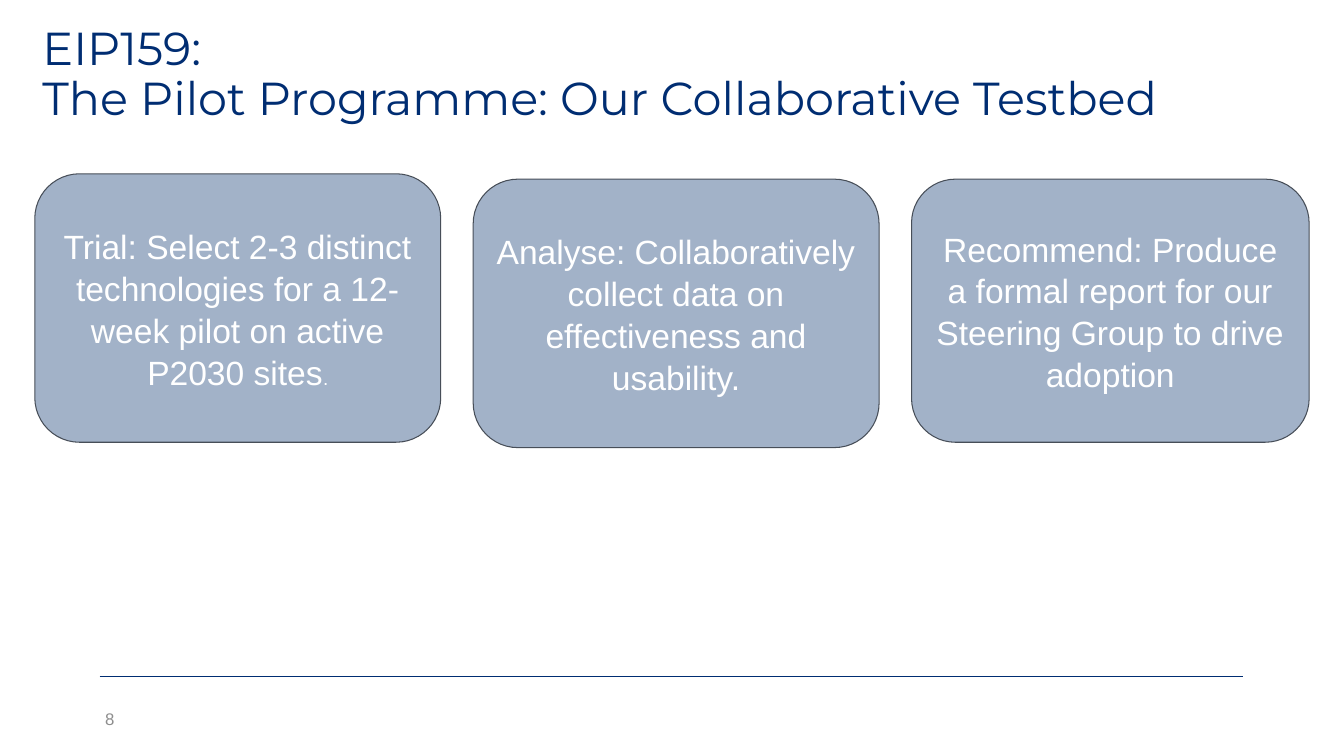
from lxml.etree import SubElement
from pptx import Presentation
from pptx.dml.color import RGBColor
from pptx.enum.shapes import MSO_CONNECTOR, MSO_SHAPE
from pptx.enum.text import MSO_ANCHOR, MSO_AUTO_SIZE, PP_ALIGN
from pptx.oxml.ns import qn
from pptx.util import Cm, Pt

NAVY = RGBColor(0x00, 0x2D, 0x72)
STEEL = RGBColor(0xA2, 0xB2, 0xC8)
SLATE = RGBColor(0x47, 0x4E, 0x58)
GREY = RGBColor(0x8E, 0x8E, 0x8E)
WHITE = RGBColor(0xFF, 0xFF, 0xFF)

TITLE = ["EIP159:", "The Pilot Programme: Our Collaborative Testbed"]
CARDS = [
    (5.84, 13.64, 9.02, [
        ("Trial: Select 2-3 distinct technologies for a 12-week pilot on active P2030 sites", 32),
        (".", 18)]),
    (6.02, 13.64, 9.02, [
        ("Analyse: Collaboratively collect data on effectiveness and usability.", 32)]),
    (6.02, 13.36, 8.84, [
        ("Recommend: Produce a formal report for our Steering Group to drive adoption", 32)]),
]
LEFT, PITCH = 1.17, 14.73


def add_run(para, text, size, color, face="Arial"):
    run = para.add_run()
    run.text = text
    run.font.size = Pt(size)
    run.font.name = face
    run.font.color.rgb = color


def set_title(shape, x, y, w, h):
    shape.left, shape.top, shape.width, shape.height = Cm(x), Cm(y), Cm(w), Cm(h)
    frame = shape.text_frame
    frame.word_wrap = True
    frame.auto_size = MSO_AUTO_SIZE.NONE
    frame.vertical_anchor = MSO_ANCHOR.TOP
    for i, line in enumerate(TITLE):
        para = frame.add_paragraph() if i else frame.paragraphs[0]
        para.alignment = PP_ALIGN.LEFT
        para.line_spacing = 0.9
        add_run(para, line, 44, NAVY, "Montserrat")


def add_card(slide, x, y, w, h, runs):
    card = slide.shapes.add_shape(
        MSO_SHAPE.FLOWCHART_ALTERNATE_PROCESS, Cm(x), Cm(y), Cm(w), Cm(h))
    card.shadow.inherit = False
    card.fill.solid()
    card.fill.fore_color.rgb = STEEL
    card.line.color.rgb = SLATE
    card.line.width = Pt(1)
    frame = card.text_frame
    frame.word_wrap = True
    frame.vertical_anchor = MSO_ANCHOR.MIDDLE
    para = frame.paragraphs[0]
    para.alignment = PP_ALIGN.CENTER
    para.line_spacing = 1.04
    for text, size in runs:
        add_run(para, text, size, WHITE)


def add_footer(slide, x, y, w):
    rule = slide.shapes.add_connector(
        MSO_CONNECTOR.STRAIGHT, Cm(x), Cm(y), Cm(x + w), Cm(y))
    rule.line.color.rgb = NAVY
    rule.line.width = Pt(0.5)
    SubElement(rule.element.spPr, qn("a:effectLst"))
    box = slide.shapes.add_textbox(Cm(x - 0.07), Cm(y + 0.76), Cm(1.32), Cm(1.35))
    frame = box.text_frame
    frame.word_wrap = True
    frame.vertical_anchor = MSO_ANCHOR.MIDDLE
    add_run(frame.paragraphs[0], "8", 16, GREY)


def main():
    deck = Presentation()
    deck.slide_width, deck.slide_height = Cm(45.16), Cm(25.4)
    slide = deck.slides.add_slide(deck.slide_layouts[5])
    add_footer(slide, 3.35, 22.71, 38.43)
    set_title(slide.shapes.title, LEFT, 0.74, 42.82, 3.18)
    for i, (y, w, h, runs) in enumerate(CARDS):
        add_card(slide, LEFT + i * PITCH, y, w, h, runs)
    deck.save("out.pptx")


if __name__ == "__main__":
    main()
